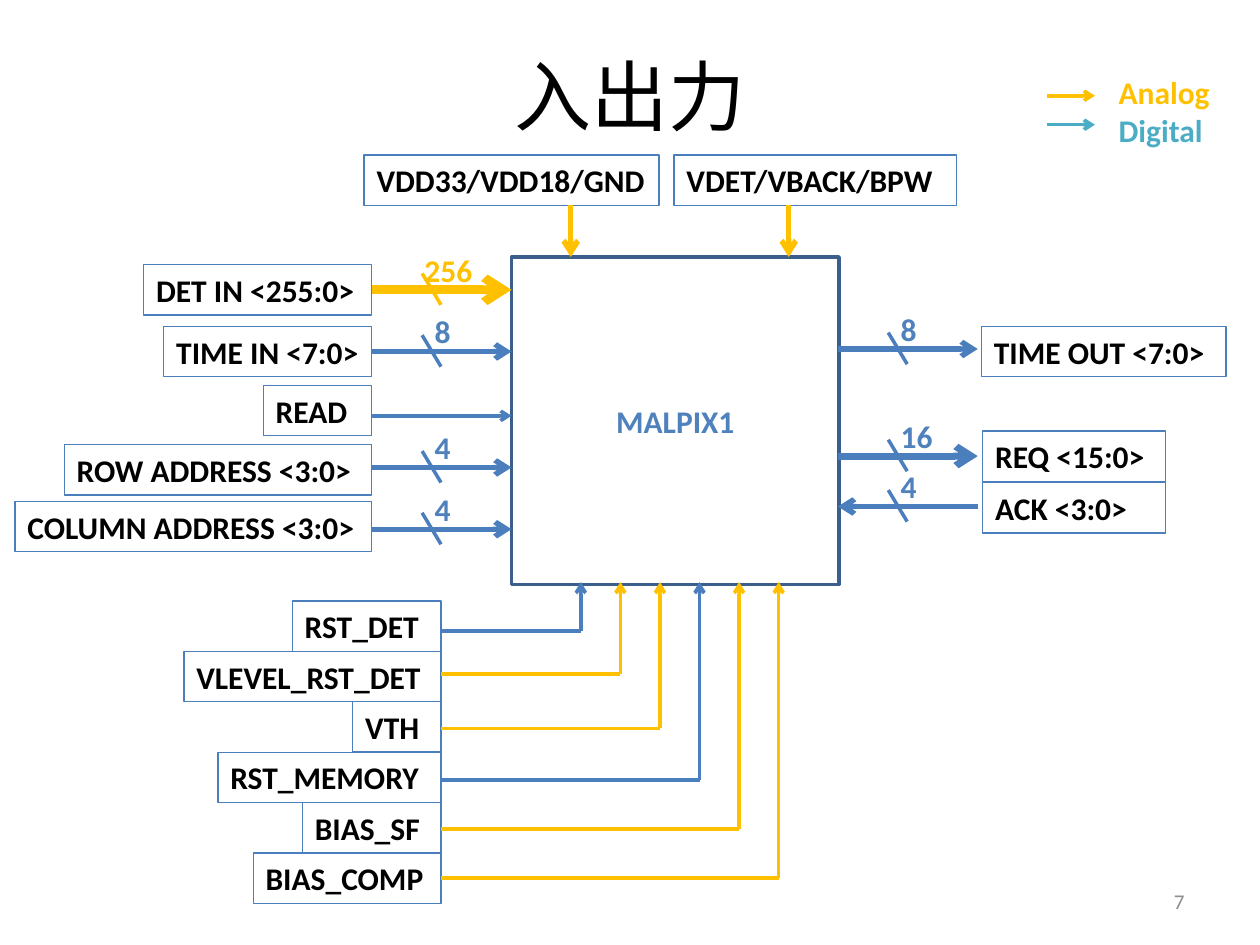
import pptx
import pptx.util
import pptx.dml.color
import pptx.enum.shapes
import pptx.enum.text
import pptx.oxml.ns
import lxml.etree

Inches = pptx.util.Inches
Pt = pptx.util.Pt
RGB = pptx.dml.color.RGBColor
Align = pptx.enum.text.PP_ALIGN
Anchor = pptx.enum.text.MSO_ANCHOR
qn = pptx.oxml.ns.qn

BLACK = RGB(0x00, 0x00, 0x00)
GRAY = RGB(0x8C, 0x8C, 0x8C)
BLUE = RGB(0x4B, 0x7E, 0xBC)
TINT = RGB(0x4F, 0x81, 0xBD)
NAVY = RGB(0x3A, 0x5F, 0x8C)
GOLD = RGB(0xFF, 0xC0, 0x00)
TEAL = RGB(0x4B, 0xAC, 0xC6)

CHIP_X, CHIP_Y, CHIP_SIZE = 4.06, 2.04, 2.6
LEFT_END = 2.95
RIGHT_NEAR, RIGHT_FAR = 6.65, 7.76
BIAS_END = 3.5
BOX_H = 0.4

INPUTS = [
    ("DET IN <255:0>", 1.14, 2.1, 2.3, 5, "256", GOLD),
    ("TIME IN <7:0>", 1.3, 2.59, 2.79, 3, "8", BLUE),
    ("READ", 2.09, 3.06, 3.3, 2, None, BLUE),
    ("ROW ADDRESS <3:0>", 0.51, 3.53, 3.71, 3, "4", BLUE),
    ("COLUMN ADDRESS <3:0>", 0.12, 3.98, 4.2, 3, "4", BLUE),
]
OUTPUTS = [
    ("TIME OUT <7:0>", 7.79, 2.59, 1.94, 2.77, 3, "8", False),
    ("REQ <15:0>", 7.8, 3.42, 1.45, 3.62, 4, "16", False),
    ("ACK <3:0>", 7.8, 3.83, 1.45, 4.02, 3, "4", True),
]
SUPPLIES = [
    ("VDD33/VDD18/GND", 2.89, 2.34, 4.53),
    ("VDET/VBACK/BPW", 5.35, 2.24, 6.26),
]
BIASES = [
    ("RST_DET", 2.32, 5.01, BLUE),
    ("VLEVEL_RST_DET", 1.46, 5.35, GOLD),
    ("VTH", 2.8, 5.78, GOLD),
    ("RST_MEMORY", 1.73, 6.19, BLUE),
    ("BIAS_SF", 2.4, 6.58, GOLD),
    ("BIAS_COMP", 2.01, 6.97, GOLD),
]


def write(shape, runs, size=18, bold=True, align=Align.LEFT, anchor=Anchor.TOP):
    frame = shape.text_frame
    frame.word_wrap = True
    frame.vertical_anchor = anchor
    if align == Align.LEFT:
        frame.margin_right = 0
    para = frame.paragraphs[0]
    para.alignment = align
    for index, (text, color) in enumerate(runs):
        if index:
            para.add_line_break()
        run = para.add_run()
        run.text = text
        run.font.name = "Calibri"
        run.font.size = Pt(size)
        run.font.bold = bold
        run.font.color.rgb = color


def label(slide, runs, x, y, w, h, **style):
    shape = slide.shapes.add_textbox(Inches(x), Inches(y), Inches(w), Inches(h))
    write(shape, runs, **style)


def box(slide, text, x, y, w, h=BOX_H, color=BLACK, edge=BLUE, weight=0.75, **style):
    kind = pptx.enum.shapes.MSO_SHAPE.RECTANGLE
    shape = slide.shapes.add_shape(kind, Inches(x), Inches(y), Inches(w), Inches(h))
    shape.shadow.inherit = False
    shape.fill.background()
    shape.line.color.rgb = edge
    shape.line.width = Pt(weight)
    write(shape, [(text, color)], **style)


def wire(slide, start, end, color, weight=2, arrow=False):
    kind = pptx.enum.shapes.MSO_CONNECTOR.STRAIGHT
    ends = [Inches(value) for value in (*start, *end)]
    line = slide.shapes.add_connector(kind, *ends)
    line.line.color.rgb = color
    line.line.width = Pt(weight)
    props = line._element.spPr
    if arrow:
        lxml.etree.SubElement(props.find(qn("a:ln")), qn("a:tailEnd"), type="arrow")
    lxml.etree.SubElement(props, qn("a:effectLst"))


def bus(slide, count, x, y, color):
    wire(slide, (x, y - 0.13), (x + 0.15, y + 0.12), color)
    shift = 0.08 if len(count) > 2 else 0
    tint = TINT if color == BLUE else color
    label(slide, [(count, tint)], x - shift, y - 0.36, 0.55 + shift, BOX_H)


def inputs(slide):
    for name, x, top, y, weight, count, color in INPUTS:
        box(slide, name, x, top, LEFT_END - x)
        wire(slide, (LEFT_END, y), (CHIP_X, y), color, weight, arrow=True)
        if count:
            bus(slide, count, LEFT_END + 0.4, y, color)


def outputs(slide):
    for name, x, top, width, y, weight, count, inward in OUTPUTS:
        box(slide, name, x, top, width)
        near, far = (RIGHT_NEAR, y), (RIGHT_FAR, y)
        start, end = (far, near) if inward else (near, far)
        wire(slide, start, end, BLUE, weight, arrow=True)
        bus(slide, count, RIGHT_NEAR + 0.4, y, BLUE)


def supplies(slide):
    top = 1.23
    for name, x, width, pin in SUPPLIES:
        box(slide, name, x, top, width)
        wire(slide, (pin, top + BOX_H), (pin, CHIP_Y), GOLD, 3, arrow=True)


def biases(slide):
    for index, (name, x, y, color) in enumerate(BIASES):
        pin = 4.61 + 0.314 * index
        box(slide, name, x, 4.77 + BOX_H * index, BIAS_END - x)
        wire(slide, (BIAS_END, y), (pin, y), color)
        wire(slide, (pin, y), (pin, 4.62), color, arrow=True)


def legend(slide):
    for y, color in ((0.76, GOLD), (0.99, TEAL)):
        wire(slide, (8.31, y), (8.69, y), color, arrow=True)
    label(slide, [("Analog", GOLD), ("Digital", TEAL)], 8.78, 0.53, 0.94, 0.71)


def main():
    deck = pptx.Presentation()
    deck.slide_width, deck.slide_height = Inches(10), Inches(7.5)
    slide = deck.slides.add_slide(deck.slide_layouts[6])
    label(slide, [("入出力", BLACK)], 0.5, 0.13, 9, 1.25, size=44, bold=False,
          align=Align.CENTER, anchor=Anchor.MIDDLE)
    label(slide, [("7", GRAY)], 7.17, 6.95, 2.33, 0.4, size=12, bold=False,
          align=Align.RIGHT, anchor=Anchor.MIDDLE)
    box(slide, "MALPIX1", CHIP_X, CHIP_Y, CHIP_SIZE, CHIP_SIZE, color=TINT,
        edge=NAVY, weight=2, align=Align.CENTER, anchor=Anchor.MIDDLE)
    inputs(slide)
    outputs(slide)
    supplies(slide)
    biases(slide)
    legend(slide)
    deck.save("out.pptx")


if __name__ == "__main__":
    main()
